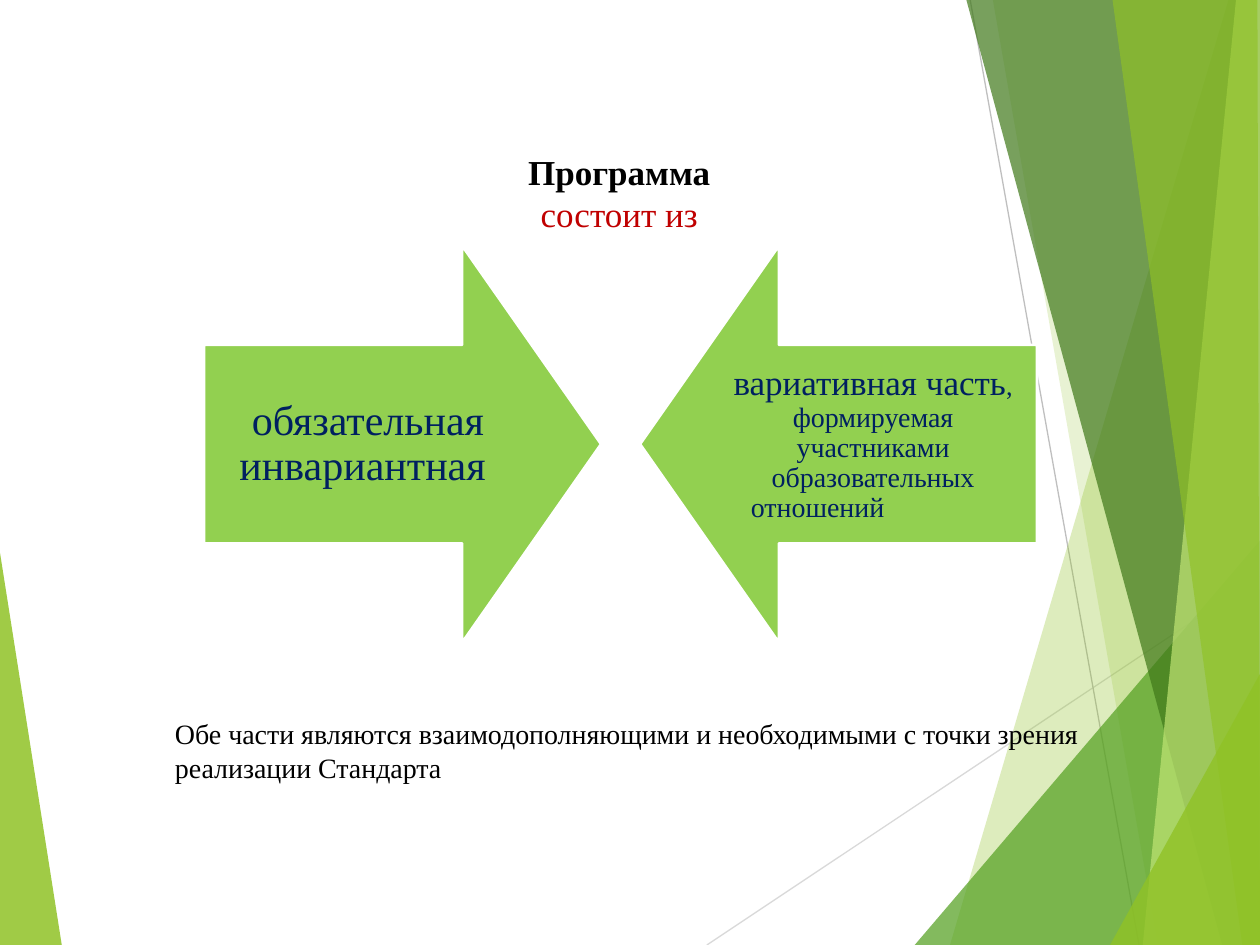
"""Build a slide with two facing arrows that show the two parts of a programme."""
from typing import NamedTuple, Optional

from lxml import etree
from pptx import Presentation
from pptx import util as u
from pptx.dml.color import RGBColor
from pptx.enum import shapes, text
from pptx.oxml.ns import qn

BLACK = RGBColor(0x00, 0x00, 0x00)
WHITE = RGBColor(0xFF, 0xFF, 0xFF)
RED = RGBColor(0xC0, 0x00, 0x00)
NAVY = RGBColor(0x00, 0x20, 0x60)
ARROW_GREEN = RGBColor(0x92, 0xD0, 0x50)
LIME = RGBColor(0x90, 0xC2, 0x26)
PALE_LIME = RGBColor(0xC0, 0xE4, 0x74)
GREEN = RGBColor(0x54, 0xA0, 0x21)
DARK_GREEN = RGBColor(0x3F, 0x78, 0x19)
LIGHT_GREY = RGBColor(0xD9, 0xD9, 0xD9)
GREY = RGBColor(0xBF, 0xBF, 0xBF)

WIDTH, HEIGHT = u.Inches(10), u.Inches(7.5)
FONT = "Times New Roman"


class Wedge(NamedTuple):
    points: tuple
    color: RGBColor
    opacity: int


class Ray(NamedTuple):
    start: tuple
    end: tuple
    color: RGBColor


class Run(NamedTuple):
    words: str
    size: float
    color: RGBColor = BLACK
    bold: bool = False


class Para(NamedTuple):
    runs: tuple
    align: text.PP_ALIGN = text.PP_ALIGN.CENTER
    indent: float = 0


class Part(NamedTuple):
    preset: shapes.MSO_SHAPE
    arrow_left: float
    text_left: float
    inset: float
    paras: tuple


LEFT_WEDGE = Wedge(((0, 0.585), (0.049, 1), (0, 1)), LIME, 85)
RAYS = (
    Ray((0.561, 1), (1, 0.61), LIGHT_GREY),
    Ray((0.77, 0), (0.904, 1), GREY),
)
RIGHT_WEDGES = (
    Wedge(((0.975, 0), (0.754, 1), (1, 1), (1, 0)), LIME, 30),
    Wedge(((0.788, 0), (0.919, 1), (1, 1), (1, 0)), LIME, 20),
    Wedge(((0.726, 1), (1, 0.572), (1, 1)), GREEN, 72),
    Wedge(((0.767, 0), (0.97, 1), (1, 1), (1, 0)), DARK_GREEN, 70),
    Wedge(((0.981, 0), (0.907, 1), (1, 1), (1, 0)), PALE_LIME, 70),
    Wedge(((0.883, 0), (0.986, 1), (1, 1), (0.998, 0)), LIME, 65),
    Wedge(((0.881, 1), (1, 0.713), (1, 1)), LIME, 80),
)
PARTS = (
    Part(shapes.MSO_SHAPE.RIGHT_ARROW, 0.162, 0.162, 0.19,
         (Para((Run("обязательная инвариантная ", 24, NAVY),)),)),
    Part(shapes.MSO_SHAPE.LEFT_ARROW, 0.508, 0.563, 0.16,
         (Para((Run("вариативная часть", 20, NAVY), Run(", ", 15, NAVY),
                Run("формируемая участниками образовательных", 16, NAVY))),
          Para((Run("отношений", 16, NAVY),), text.PP_ALIGN.LEFT, 0.17))),
)
TITLE = (
    Para((Run("Программа", 20, bold=True),)),
    Para((Run("состоит из", 20, RED),)),
)
CAPTION = (
    Para((Run("Обе части являются взаимодополняющими и необходимыми "
              "с точки зрения реализации Стандарта", 16),), text.PP_ALIGN.LEFT),
)


def place(x: float, y: float) -> tuple:
    """Turn shares of the slide into lengths."""
    return u.Emu(round(x * WIDTH)), u.Emu(round(y * HEIGHT))


def add_wedge(slide, wedge: Wedge) -> None:
    """Draw a translucent polygon."""
    first, *rest = [place(*point) for point in wedge.points]
    builder = slide.shapes.build_freeform(*first, scale=1.0)
    builder.add_line_segments(rest, close=True)
    sp = builder.convert_to_shape()
    sp.shadow.inherit = False
    sp.line.fill.background()
    sp.fill.solid()
    sp.fill.fore_color.rgb = wedge.color
    color = sp.fill._xPr.find(qn("a:solidFill"))[0]
    etree.SubElement(color, qn("a:alpha")).set("val", str(wedge.opacity * 1000))


def add_ray(slide, ray: Ray) -> None:
    """Draw a thin straight line."""
    line = slide.shapes.add_connector(
        shapes.MSO_CONNECTOR.STRAIGHT, *place(*ray.start), *place(*ray.end))
    line.line.color.rgb = ray.color
    line.line.width = u.Pt(0.75)
    etree.SubElement(line._element.spPr, qn("a:effectLst"))


def add_text(slide, paras: tuple, box: tuple, *, wrap: bool = True,
             anchor: text.MSO_ANCHOR = text.MSO_ANCHOR.TOP,
             inset: Optional[float] = None, spacing: float = 1.0) -> None:
    """Write formatted paragraphs in a box given as shares of the slide."""
    sp = slide.shapes.add_textbox(*place(*box[:2]), *place(*box[2:]))
    tf = sp.text_frame
    tf.word_wrap = wrap
    tf.vertical_anchor = anchor
    if inset is not None:
        tf.margin_left = tf.margin_right = u.Inches(inset)
        tf.margin_top = tf.margin_bottom = u.Inches(inset)
    for i, para in enumerate(paras):
        p = tf.add_paragraph() if i else tf.paragraphs[0]
        p.alignment = para.align
        p.line_spacing = spacing
        if para.indent:
            p._p.get_or_add_pPr().set("marL", str(u.Inches(para.indent)))
        for run in para.runs:
            r = p.add_run()
            r.text = run.words
            r.font.name = FONT
            r.font.size = u.Pt(run.size)
            r.font.bold = run.bold
            r.font.color.rgb = run.color


def add_part(slide, part: Part) -> None:
    """Draw an arrow and its label."""
    sp = slide.shapes.add_shape(
        part.preset, *place(part.arrow_left, 0.26), *place(0.315, 0.42))
    sp.adjustments[0], sp.adjustments[1] = 0.5, 0.35
    sp.shadow.inherit = False
    sp.fill.solid()
    sp.fill.fore_color.rgb = ARROW_GREEN
    sp.line.color.rgb = WHITE
    sp.line.width = u.Pt(1.5)
    add_text(slide, part.paras, (part.text_left, 0.365, 0.26, 0.211),
             anchor=text.MSO_ANCHOR.MIDDLE, inset=part.inset, spacing=0.9)


def main() -> None:
    """Build and save the slide."""
    prs = Presentation()
    prs.slide_width, prs.slide_height = WIDTH, HEIGHT
    slide = prs.slides.add_slide(prs.slide_layouts[6])
    add_wedge(slide, LEFT_WEDGE)
    for ray in RAYS:
        add_ray(slide, ray)
    for wedge in RIGHT_WEDGES:
        add_wedge(slide, wedge)
    for part in PARTS:
        add_part(slide, part)
    add_text(slide, TITLE, (0.405, 0.153, 0.173, 0.103), wrap=False)
    add_text(slide, CAPTION, (0.129, 0.752, 0.798, 0.085))
    prs.save("out.pptx")


if __name__ == "__main__":
    main()
